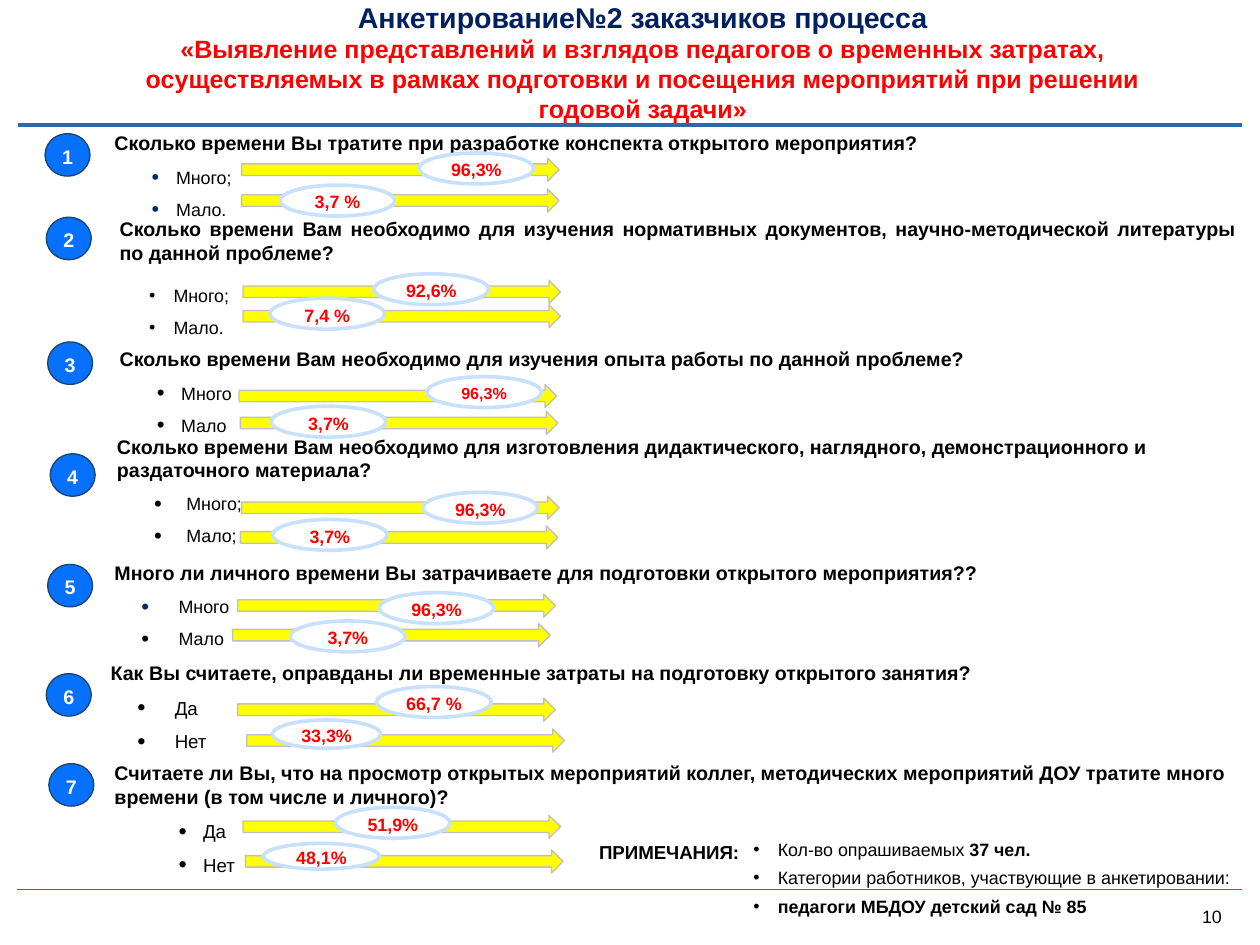
from collections import namedtuple

from lxml.etree import SubElement
from pptx import Presentation
from pptx.dml.color import RGBColor
from pptx.enum.shapes import MSO_CONNECTOR, MSO_SHAPE
from pptx.enum.text import MSO_ANCHOR, PP_ALIGN
from pptx.oxml.ns import qn
from pptx.util import Inches, Pt

BLACK = RGBColor(0x00, 0x00, 0x00)
WHITE = RGBColor(0xFF, 0xFF, 0xFF)
NAVY = RGBColor(0x00, 0x20, 0x60)
BULLET_NAVY = RGBColor(0x00, 0x29, 0x60)
RED = RGBColor(0xFF, 0x00, 0x00)
YELLOW = RGBColor(0xFF, 0xFF, 0x00)
GRAY = RGBColor(0xBF, 0xBF, 0xBF)
RULE_BLUE = RGBColor(0x2E, 0x69, 0xA5)
BADGE_BLUE = RGBColor(0x07, 0x71, 0xFF)
BADGE_EDGE = RGBColor(0x1C, 0x43, 0x6A)
PALE_BLUE = RGBColor(0xC7, 0xE0, 0xFB)

Question = namedtuple("Question", "text position badge justified answers_box indent hanging size bullet_size answers")
Answer = namedtuple("Answer", "text bullet_color arrow value oval oval_size value_size",
                    defaults=((0.89, 0.24), 10))

QUESTIONS = [
    Question("Сколько времени Вы тратите при разработке конспекта открытого мероприятия?",
             (0.89, 1.02), (0.35, 1.04), False, (0.89, 1.21), 0.48, 0.19, 10, 120,
             [Answer("Много;", BULLET_NAVY, (1.88, 1.23), "96,3%", (3.26, 1.19)),
              Answer("Мало.", BULLET_NAVY, (1.88, 1.47), "3,7 %", (2.18, 1.44))]),
    Question("Сколько времени Вам необходимо для изучения нормативных документов, "
             "научно-методической литературы по данной проблеме?",
             (0.93, 1.69), (0.36, 1.69), True, (0.87, 2.13), 0.48, 0.19, 10, 100,
             [Answer("Много;", BLACK, (1.89, 2.18), "92,6%", (2.91, 2.13)),
              Answer("Мало.", BLACK, (1.89, 2.37), "7,4 %", (2.1, 2.32))]),
    Question("Сколько времени Вам необходимо для изучения опыта работы по данной проблеме?",
             (0.93, 2.7), (0.37, 2.66), False, (0.93, 2.89), 0.48, 0.19, 10, 125,
             [Answer("Много", BLACK, (1.86, 2.99), "96,3%", (3.32, 2.93), value_size=9),
              Answer("Мало", BLACK, (1.87, 3.2), "3,7%", (2.11, 3.16))]),
    Question("Сколько времени Вам необходимо для изготовления дидактического, наглядного, "
             "демонстрационного и раздаточного материала?",
             (0.91, 3.38), (0.39, 3.53), False, (0.91, 3.75), 0.54, 0.25, 10, 125,
             [Answer("Много;", BLACK, (1.88, 3.86), "96,3%", (3.29, 3.83)),
              Answer("Мало;", BLACK, (1.87, 4.09), "3,7%", (2.12, 4.04))]),
    Question("Много ли личного времени Вы затрачиваете для подготовки открытого мероприятия??",
             (0.89, 4.36), (0.37, 4.39), False, (0.89, 4.55), 0.5, 0.29, 10, 125,
             [Answer("Много", BULLET_NAVY, (1.85, 4.62), "96,3%", (2.95, 4.61)),
              Answer("Мало", BLACK, (1.81, 4.85), "3,7%", (2.26, 4.83))]),
    Question("Как Вы считаете, оправданы ли временные затраты на подготовку открытого занятия?",
             (0.86, 5.14), (0.36, 5.24), False, (0.86, 5.33), 0.5, 0.29, 10.5, 125,
             [Answer("Да", BLACK, (1.85, 5.43), "66,7 %", (2.93, 5.34)),
              Answer("Нет", BLACK, (1.92, 5.67), "33,3%", (2.12, 5.6), (0.84, 0.22))]),
    Question("Считаете ли Вы, что на просмотр открытых мероприятий коллег, методических "
             "мероприятий ДОУ тратите много времени (в том числе и личного)?",
             (0.89, 5.92), (0.38, 5.94), False, (0.89, 6.29), 0.69, 0.19, 10.5, 125,
             [Answer("Да", BLACK, (1.89, 6.34), "51,9%", (2.61, 6.28)),
              Answer("Нет", BLACK, (1.91, 6.61), "48,1%", (2.05, 6.56), (0.9, 0.2))]),
]

NOTES = [
    [("Кол-во опрашиваемых ", False), ("37 чел.", True)],
    [("Категории работников, участвующие в анкетировании:", False)],
    [("педагоги МБДОУ детский сад № 85", True)],
]


def style(paragraph, size, color, bold=None, align=PP_ALIGN.LEFT):
    """Set the font and alignment of a paragraph."""
    paragraph.alignment = align
    font = paragraph.font
    font.name, font.size, font.bold = "Arial", Pt(size), bold
    font.color.rgb = color


def add_bullet(paragraph, indent, hanging, color=BLACK, percent=100):
    """Give a paragraph a hanging round bullet."""
    properties = paragraph._p.get_or_add_pPr()
    properties.set("marL", str(Inches(indent)))
    properties.set("indent", str(-Inches(hanging)))
    fill = SubElement(properties, qn("a:buClr"))
    SubElement(fill, qn("a:srgbClr"), val=str(color))
    SubElement(properties, qn("a:buSzPct"), val=str(percent * 1000))
    SubElement(properties, qn("a:buFont"), typeface="Arial")
    SubElement(properties, qn("a:buChar"), char="•")


def clear_margins(frame):
    """Remove the insets of a text frame."""
    frame.margin_left = frame.margin_right = frame.margin_top = frame.margin_bottom = 0


def add_text_frame(slide, left, top, width, height, anchor=MSO_ANCHOR.TOP):
    """Add a wrapping text box without insets and return its frame."""
    frame = slide.shapes.add_textbox(Inches(left), Inches(top), Inches(width), Inches(height)).text_frame
    clear_margins(frame)
    frame.word_wrap = True
    frame.vertical_anchor = anchor
    return frame


def add_paragraphs(frame, count):
    """Return the given number of paragraphs in an empty frame."""
    return [frame.paragraphs[0]] + [frame.add_paragraph() for _ in range(count - 1)]


def add_line(slide, left, right, top, width):
    """Draw a horizontal rule."""
    line = slide.shapes.add_connector(MSO_CONNECTOR.STRAIGHT, Inches(left), Inches(top),
                                      Inches(right), Inches(top))
    line.line.color.rgb = RULE_BLUE
    line.line.width = Pt(width)
    SubElement(line._element.spPr, qn("a:effectLst"))


def add_figure(slide, kind, position, size, fill, edge, edge_width):
    """Add a filled and outlined preset shape."""
    shape = slide.shapes.add_shape(kind, *map(Inches, position + size))
    shape.shadow.inherit = False
    shape.fill.solid()
    shape.fill.fore_color.rgb = fill
    shape.line.color.rgb = edge
    shape.line.width = Pt(edge_width)
    return shape


def add_label(shape, text, size, color):
    """Write a bold centred label in a shape."""
    frame = shape.text_frame
    clear_margins(frame)
    frame.margin_top = Inches(0.02)
    frame.word_wrap = False
    frame.vertical_anchor = MSO_ANCHOR.MIDDLE
    frame.paragraphs[0].text = text
    style(frame.paragraphs[0], size, color, True, PP_ALIGN.CENTER)


def add_question(slide, number, question):
    """Add a numbered question with its list of answers."""
    badge = add_figure(slide, MSO_SHAPE.OVAL, question.badge, (0.35, 0.33), BADGE_BLUE, BADGE_EDGE, 0.75)
    add_label(badge, str(number), 11, WHITE)
    paragraph = add_text_frame(slide, *question.position, 8.69, 0.37).paragraphs[0]
    paragraph.text = question.text
    style(paragraph, 11, BLACK, True, PP_ALIGN.JUSTIFY if question.justified else PP_ALIGN.LEFT)
    frame = add_text_frame(slide, *question.answers_box, 1.5, 0.5)
    for paragraph, answer in zip(add_paragraphs(frame, len(question.answers)), question.answers):
        paragraph.text = answer.text
        paragraph.line_spacing = 1.5
        add_bullet(paragraph, question.indent, question.hanging, answer.bullet_color, question.bullet_size)
        style(paragraph, question.size, BLACK)


def add_result(slide, answer):
    """Add an arrow with the share of an answer in an oval on it."""
    add_figure(slide, MSO_SHAPE.RIGHT_ARROW, answer.arrow, (2.47, 0.18), YELLOW, GRAY, 0.75)
    oval = add_figure(slide, MSO_SHAPE.OVAL, answer.oval, answer.oval_size, WHITE, PALE_BLUE, 2)
    add_label(oval, answer.value, answer.value_size, RED)


def add_title(slide):
    """Add the two-part heading."""
    frame = add_text_frame(slide, 0.93, -0.01, 8.14, 0.98, MSO_ANCHOR.MIDDLE)
    heading, topic = add_paragraphs(frame, 2)
    heading.text = "Анкетирование№2 заказчиков процесса"
    style(heading, 16, NAVY, True, PP_ALIGN.CENTER)
    topic.text = ("«Выявление представлений и взглядов педагогов о временных затратах, осуществляемых "
                  "в рамках подготовки и посещения мероприятий при решении годовой задачи»")
    style(topic, 14, RED, True, PP_ALIGN.CENTER)


def add_notes(slide):
    """Add the remarks and the page number."""
    heading = add_text_frame(slide, 4.66, 6.54, 1.18, 0.18).paragraphs[0]
    heading.text = "ПРИМЕЧАНИЯ:"
    style(heading, 10.5, BLACK, True)
    frame = add_text_frame(slide, 5.86, 6.52, 3.9, 0.62)
    for index, (paragraph, parts) in enumerate(zip(add_paragraphs(frame, len(NOTES)), NOTES)):
        if index:
            paragraph.space_before = Pt(4)
        add_bullet(paragraph, 0.19, 0.19)
        style(paragraph, 10, BLACK)
        for text, bold in parts:
            run = paragraph.add_run()
            run.text = text
            run.font.bold = bold
    page = add_text_frame(slide, 9.35, 7.04, 0.23, 0.17, MSO_ANCHOR.MIDDLE).paragraphs[0]
    page.text = "10"
    style(page, 10, BLACK)


def main():
    """Build the survey slide and save it."""
    presentation = Presentation()
    presentation.slide_width, presentation.slide_height = Inches(9.8), Inches(7.35)
    slide = presentation.slides.add_slide(presentation.slide_layouts[6])
    add_line(slide, 0.13, 9.66, 6.92, 0.75)
    add_line(slide, 0.14, 9.66, 0.97, 2.25)
    add_title(slide)
    for number, question in enumerate(QUESTIONS, 1):
        add_question(slide, number, question)
    for question in QUESTIONS:
        for answer in question.answers:
            add_result(slide, answer)
    add_notes(slide)
    presentation.save("out.pptx")


if __name__ == "__main__":
    main()
